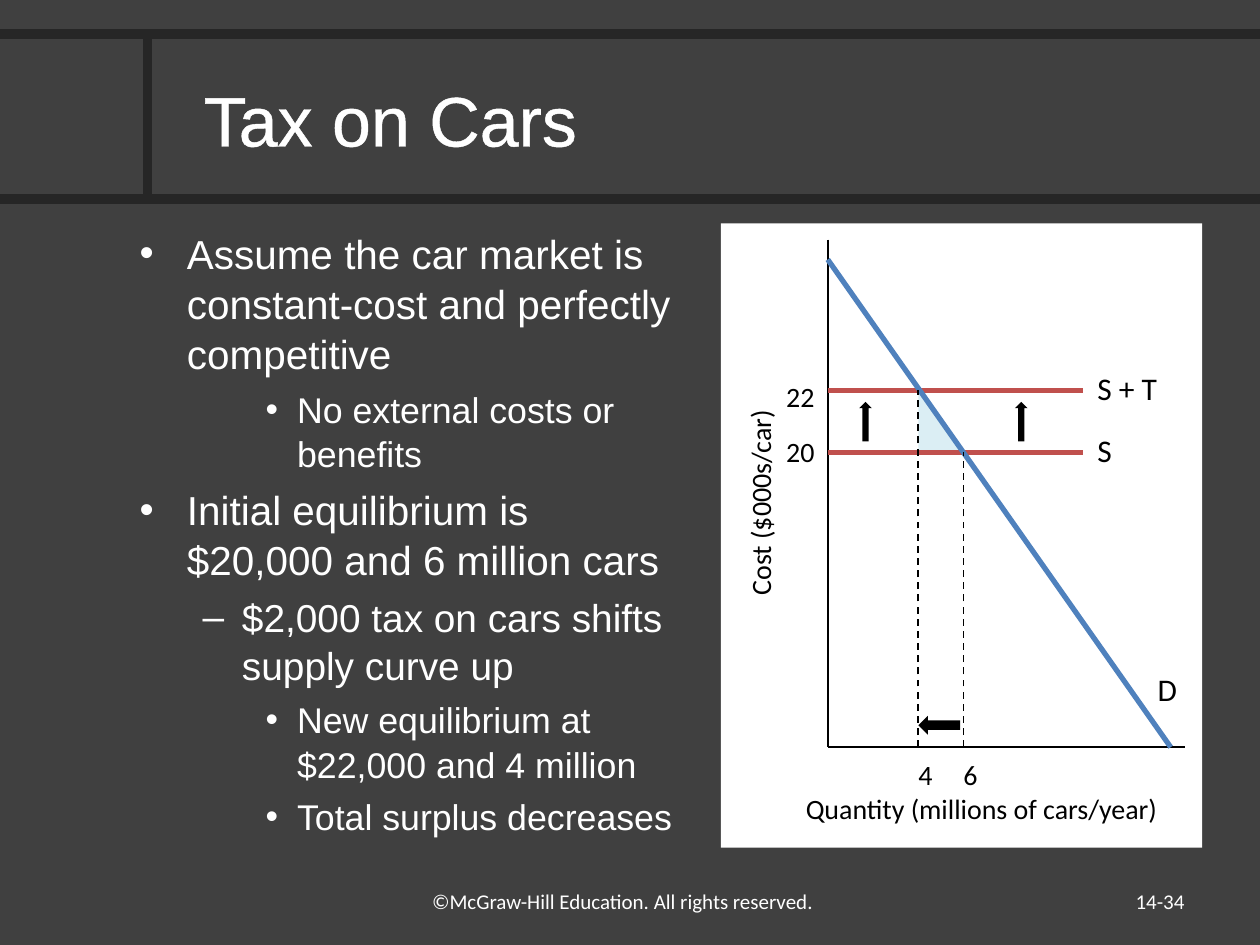
"""Build the slide on a tax in the car market, with its supply and demand diagram."""
from lxml import etree
from pptx import Presentation
from pptx import util as u
from pptx.dml import color
from pptx.enum import dml, shapes, text
from pptx.oxml import ns

Pt = u.Pt
WHITE, BLACK, BACKGROUND, RULE = "FFFFFF", "000000", "404040", "262626"
SUPPLY, DEMAND, LOSS = "C0504D", "4F81BD", "DBEEF4"
LEFT, CENTER, RIGHT = text.PP_ALIGN.LEFT, text.PP_ALIGN.CENTER, text.PP_ALIGN.RIGHT
TOP, MIDDLE = text.MSO_ANCHOR.TOP, text.MSO_ANCHOR.MIDDLE

AXIS_X, AXIS_Y = 473, 427
PRICE_OLD, PRICE_NEW = 258.5, 223
QTY_OLD, QTY_NEW = 550.6, 524.8
SUPPLY_END = 619

LEVELS = [("•", 27, 27, 23.1), ("–", 58.5, 22.5, 22.2), ("•", 90, 18, 20.4)]
POINTS = [
    (0, "Assume the car market is constant-cost and perfectly competitive"),
    (2, "No external costs or benefits"),
    (0, "Initial equilibrium is $20,000 and 6 million cars"),
    (1, "$2,000 tax on cars shifts supply curve up"),
    (2, "New equilibrium at $22,000 and 4 million"),
    (2, "Total surplus decreases"),
]


def paint(target, hex_color):
    """Give a fill, or the fill of a line, a solid colour."""
    target.solid()
    target.fore_color.rgb = color.RGBColor.from_string(hex_color)


def add_text(slide, words, left, top, width, height, *, size=16, font="Calibri",
             hue=BLACK, align=LEFT, anchor=TOP, wrap=True, rotation=0):
    """Add a one-paragraph text box and return its run."""
    box = slide.shapes.add_textbox(Pt(left), Pt(top), Pt(width), Pt(height))
    box.rotation = rotation
    frame = box.text_frame
    frame.word_wrap, frame.vertical_anchor = wrap, anchor
    paragraph = frame.paragraphs[0]
    paragraph.alignment = align
    run = paragraph.add_run()
    run.text = words
    run.font.size, run.font.name = Pt(size), font
    paint(run.font.fill, hue)
    return run


def add_line(slide, start, end, hue=BLACK, width=1, dashed=False):
    """Draw a straight line between two points."""
    line = slide.shapes.add_connector(
        shapes.MSO_CONNECTOR.STRAIGHT, *(Pt(value) for value in (*start, *end)))
    paint(line.line.fill, hue)
    line.line.width = Pt(width)
    if dashed:
        line.line.dash_style = dml.MSO_LINE.DASH
    etree.SubElement(line._element.spPr, ns.qn("a:effectLst"))


def finish_shape(shape, hue):
    """Fill a shape and clear its outline and shadow."""
    paint(shape.fill, hue)
    shape.line.fill.background()
    shape.shadow.inherit = False


def add_block(slide, kind, left, top, width, height, hue=BLACK):
    """Add a filled preset shape."""
    finish_shape(slide.shapes.add_shape(
        kind, Pt(left), Pt(top), Pt(width), Pt(height)), hue)


def add_area(slide, corners, hue):
    """Add a filled polygon through the given points."""
    first, *rest = [(Pt(x), Pt(y)) for x, y in corners]
    builder = slide.shapes.build_freeform(*first)
    builder.add_line_segments(rest, close=True)
    finish_shape(builder.convert_to_shape(), hue)


def add_points(slide):
    """Add the bulleted argument."""
    box = slide.shapes.add_textbox(Pt(72.7), Pt(126), Pt(324), Pt(356.4))
    frame = box.text_frame
    frame.word_wrap = True
    for index, (level, words) in enumerate(POINTS):
        mark, margin, hanging, size = LEVELS[level]
        point = frame.paragraphs[0] if index == 0 else frame.add_paragraph()
        point.level, point.line_spacing = level, 1.04
        point.space_before = Pt(4.5 if index else 0)
        properties = point._p.get_or_add_pPr()
        properties.set("marL", str(Pt(margin)))
        properties.set("indent", str(-Pt(hanging)))
        etree.SubElement(properties, ns.qn("a:buFont"), typeface="Arial")
        etree.SubElement(properties, ns.qn("a:buChar"), char=mark)
        run = point.add_run()
        run.text = words
        run.font.size, run.font.name = Pt(size), "Arial"
        paint(run.font.fill, WHITE)


def add_title(slide):
    """Add the rules of the title band and the outlined title."""
    for start, end in [((0, 113.8), (720, 113.8)), ((84.2, 19.4), (84.2, 113.8)),
                       ((0, 19.4), (720, 19.4))]:
        add_line(slide, start, end, RULE, 5.5)
    title = add_text(slide, "Tax on Cars", 109.4, 21.6, 312.5, 92.2, size=40,
                     font="Arial", hue=WHITE, anchor=MIDDLE)
    outline = etree.Element(ns.qn("a:ln"), w=str(Pt(1.45)))
    fill = etree.SubElement(outline, ns.qn("a:solidFill"))
    etree.SubElement(fill, ns.qn("a:srgbClr"), val=WHITE)
    title.font._element.insert(0, outline)


def add_diagram(slide):
    """Draw the market before and after the tax."""
    add_block(slide, shapes.MSO_SHAPE.RECTANGLE, 412, 127.6, 275, 356.8, WHITE)
    add_area(slide, [(QTY_NEW, PRICE_NEW), (QTY_NEW, PRICE_OLD), (QTY_OLD, PRICE_OLD)], LOSS)
    add_line(slide, (AXIS_X, AXIS_Y), (677.3, AXIS_Y))
    add_line(slide, (AXIS_X, 137), (AXIS_X, AXIS_Y))
    for price, words, name, label_top in [(PRICE_OLD, "20", "S", 244.8),
                                          (PRICE_NEW, "22", "S + T", 213.2)]:
        add_line(slide, (AXIS_X, price), (SUPPLY_END, price), SUPPLY, 3)
        add_text(slide, words, AXIS_X - 40, label_top, 39.5, 26.6, align=RIGHT)
        add_text(slide, name, SUPPLY_END + 1, price - 15.8, 58, 28.8, size=18, wrap=False)
    add_line(slide, (AXIS_X, 148.3), (669, AXIS_Y), DEMAND, 3)
    add_text(slide, "D", 654.5, 379.5, 25, 28.8, size=18, align=CENTER, wrap=False)
    for quantity, price, words in [(QTY_OLD, PRICE_OLD, "6"), (QTY_NEW, PRICE_NEW, "4")]:
        add_line(slide, (quantity, AXIS_Y), (quantity, price), dashed=True)
        add_text(slide, words, quantity - 9, 429.1, 26, 26.6, align=CENTER, wrap=False)
    for left in (491, 580):
        add_block(slide, shapes.MSO_SHAPE.UP_ARROW, left, 229.7, 7.2, 22.5)
    add_block(slide, shapes.MSO_SHAPE.LEFT_ARROW, QTY_NEW, 409, 23.8, 10.8)
    add_text(slide, "Quantity (millions of cars/year)", 443.5, 448.6, 234.7, 26.6,
             align=CENTER)
    add_text(slide, "Cost ($000s/car)", 328.3, 275, 210.2, 24.5, align=CENTER, rotation=270)


def main():
    """Build and save the slide."""
    deck = Presentation()
    deck.slide_width, deck.slide_height = Pt(720), Pt(540)
    slide = deck.slides.add_slide(deck.slide_layouts[6])
    paint(slide.background.fill, BACKGROUND)
    add_title(slide)
    add_points(slide)
    add_text(slide, "©McGraw-Hill Education. All rights reserved.", 239.8, 504, 239.8, 25.2,
             size=12, hue=WHITE)
    add_text(slide, "14-34", 516.2, 500.4, 167.8, 28.8, size=12, hue=WHITE, align=RIGHT,
             anchor=MIDDLE)
    add_diagram(slide)
    deck.save("out.pptx")


if __name__ == "__main__":
    main()
